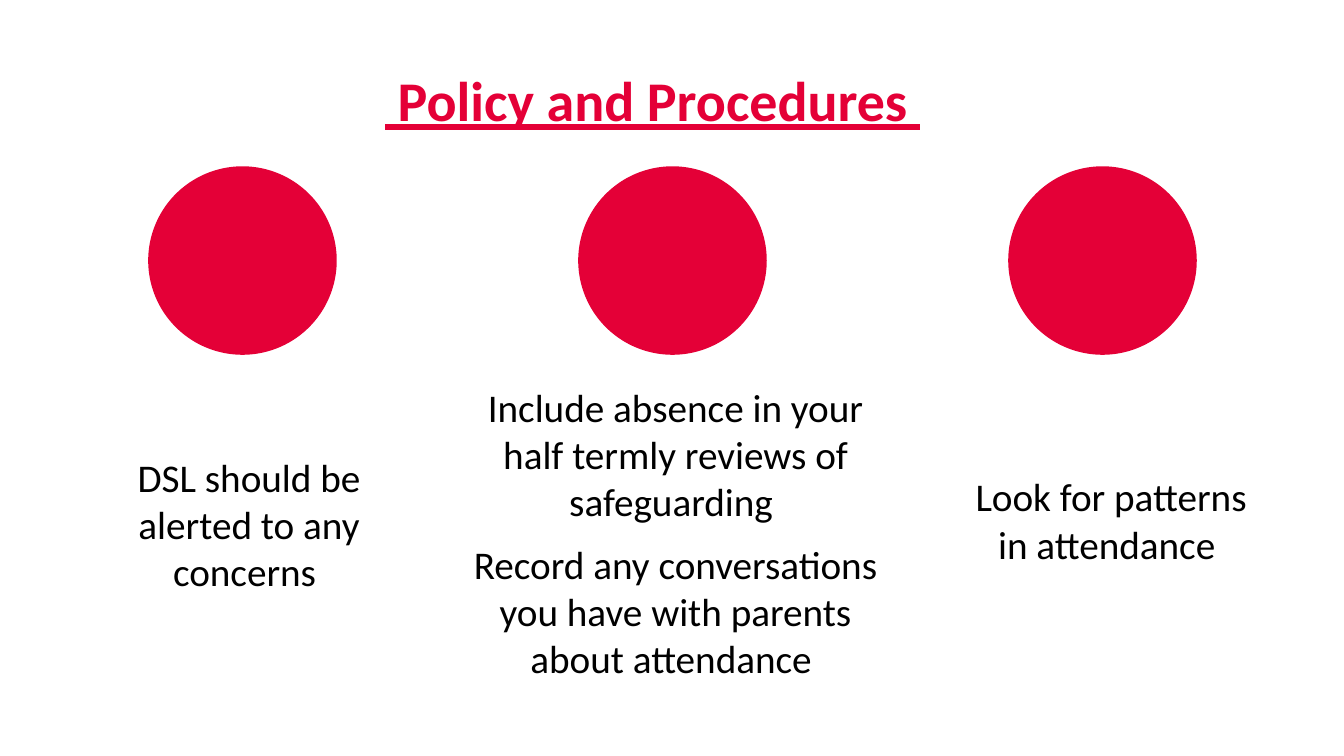
from dataclasses import dataclass

from pptx import Presentation
from pptx import util as u
from pptx.dml.color import RGBColor
from pptx.enum import shapes, text
from pptx.slide import Slide


@dataclass(frozen=True)
class Theme:
    font: str = "Calibri"
    accent: RGBColor = RGBColor.from_string("E40037")
    ink: RGBColor = RGBColor.from_string("000000")
    title_size: float = 40
    body_size: float = 28
    space_after: float = 11.3


@dataclass(frozen=True)
class Box:
    left: float
    top: float
    width: float
    height: float

    def emu(self) -> list[u.Length]:
        return [u.Inches(v) for v in (self.left, self.top, self.width, self.height)]


@dataclass(frozen=True)
class Step:
    box: Box
    paragraphs: tuple[str, ...]


THEME = Theme()
TITLE_BOX = Box(3.82, 0.65, 8.1, 1.16)
CIRCLE_LEFT, CIRCLE_TOP, CIRCLE_SIZE, CIRCLE_PITCH = 1.47, 1.65, 1.87, 4.265
TITLE_FORMAT = {"size": u.Pt(THEME.title_size), "bold": True, "underline": True}
BODY_FORMAT = {"size": u.Pt(THEME.body_size)}

STEPS = (
    Step(Box(1.1, 4.5, 2.74, 1.87), ("DSL should be alerted to any concerns ",)),
    Step(Box(4.58, 3.8, 4.24, 3.05), (
        "Include absence in your half termly reviews of safeguarding ",
        "Record any conversations you have with parents about attendance ",
    )),
    Step(Box(9.65, 4.69, 2.74, 1.16), ("Look for patterns in attendance ",)),
)


def add_text(s: Slide, box: Box, paragraphs: tuple[str, ...], color: RGBColor,
             font_format: dict, align: text.PP_ALIGN, space_after: float = 0) -> None:
    tf = s.shapes.add_textbox(*box.emu()).text_frame
    frame_format = {"word_wrap": True, "vertical_anchor": text.MSO_ANCHOR.TOP,
                    "margin_left": 0, "margin_top": 0,
                    "margin_right": 0, "margin_bottom": 0}
    for name, value in frame_format.items():
        setattr(tf, name, value)
    for i, words in enumerate(paragraphs):
        p = tf.add_paragraph() if i else tf.paragraphs[0]
        p.alignment = align
        p.space_after = u.Pt(space_after)
        r = p.add_run()
        r.text = words
        r.font.color.rgb = color
        for name, value in {"name": THEME.font, **font_format}.items():
            setattr(r.font, name, value)


def add_circle(s: Slide, box: Box) -> None:
    sp = s.shapes.add_shape(shapes.MSO_SHAPE.OVAL, *box.emu())
    sp.shadow.inherit = False
    sp.fill.solid()
    sp.fill.fore_color.rgb = THEME.accent
    sp.line.fill.background()


def main() -> None:
    prs = Presentation()
    prs.slide_width, prs.slide_height = u.Inches(13.33), u.Inches(7.5)
    s = prs.slides.add_slide(prs.slide_layouts[6])
    add_text(s, TITLE_BOX, (" Policy and Procedures ",), THEME.accent,
             TITLE_FORMAT, text.PP_ALIGN.LEFT)
    for i, step in enumerate(STEPS):
        add_circle(s, Box(CIRCLE_LEFT + i * CIRCLE_PITCH, CIRCLE_TOP,
                          CIRCLE_SIZE, CIRCLE_SIZE))
        add_text(s, step.box, step.paragraphs, THEME.ink, BODY_FORMAT,
                 text.PP_ALIGN.CENTER, THEME.space_after)
    prs.save("out.pptx")


if __name__ == "__main__":
    main()
